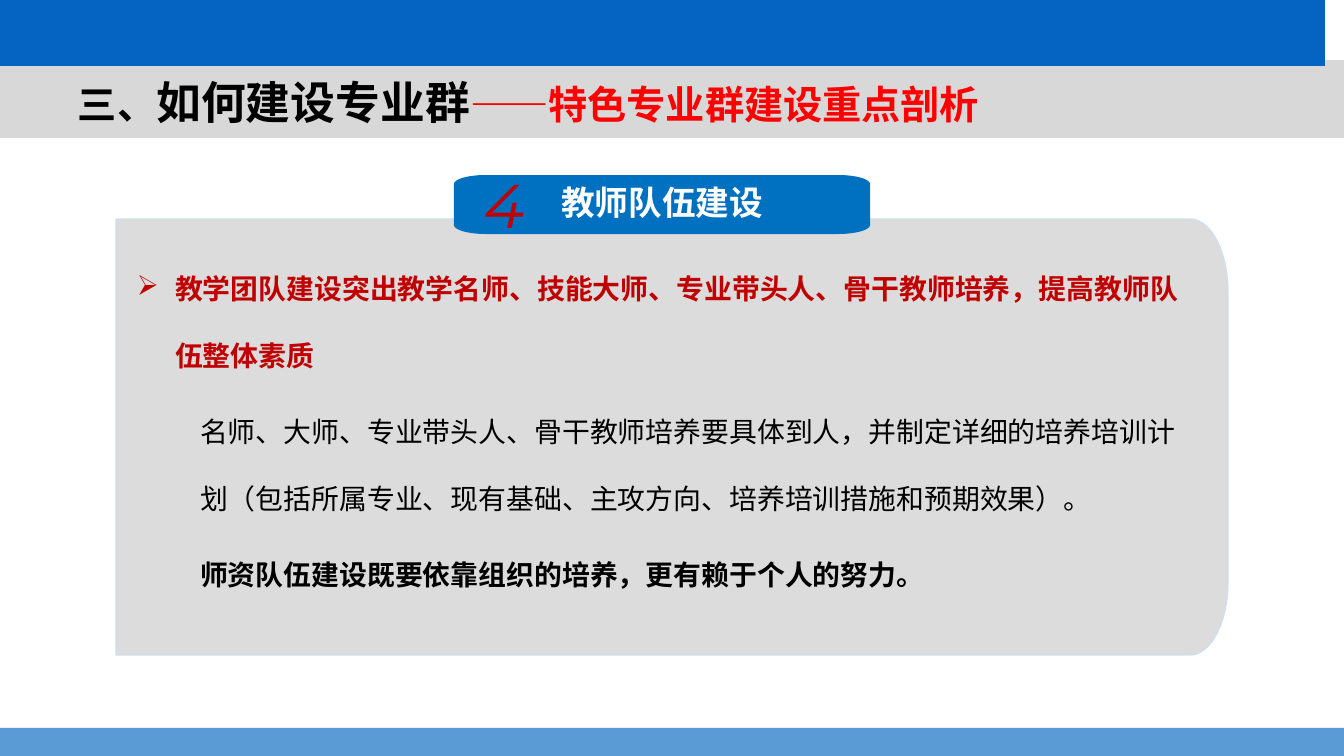
import math
from dataclasses import dataclass

import lxml.etree
import pptx
import pptx.dml.color
import pptx.enum.shapes
import pptx.enum.text
import pptx.oxml.ns
import pptx.util

PX_PER_INCH = 100.8


@dataclass(frozen=True)
class Theme:
    """Colours, fonts and type sizes of the slide."""
    white: str = "FFFFFF"
    black: str = "000000"
    grey: str = "D8D8D8"
    banner_blue: str = "0563C1"
    footer_blue: str = "5B9BD5"
    badge_blue: str = "0070C0"
    panel_edge: str = "D1DEEF"
    red: str = "FF0000"
    dark_red: str = "C00000"
    text_font: str = "Noto Sans CJK SC"
    number_font: str = "Montserrat"
    heading_size: float = 32
    subheading_size: float = 28
    badge_size: float = 24
    body_size: float = 19.9
    number_size: float = 44


THEME = Theme()


def px(length):
    """Turn a length in px into EMU."""
    return pptx.util.Inches(length / PX_PER_INCH)


def rgb(colour):
    """Turn a hex string into a colour."""
    return pptx.dml.color.RGBColor.from_string(colour)


def apply(target, **values):
    """Set each given attribute on the target."""
    for name, value in values.items():
        setattr(target, name, value)


def add_element(parent, tag, **attributes):
    """Append a drawing element with its attributes."""
    return lxml.etree.SubElement(parent, pptx.oxml.ns.qn(tag), attributes)


def paint(shape, fill, edge=None, opacity=None):
    """Give a shape its fill, outline and opacity, without shadow."""
    shape.shadow.inherit = False
    shape.fill.solid()
    shape.fill.fore_color.rgb = rgb(fill)
    if opacity:
        colour = shape.fill._xPr.find(".//" + pptx.oxml.ns.qn("a:srgbClr"))
        add_element(colour, "a:alpha", val=str(opacity * 1000))
    if edge:
        shape.line.color.rgb = rgb(edge)
        shape.line.width = pptx.util.Pt(1)
    else:
        shape.line.fill.background()


def add_bar(slide, box, fill):
    """Add a plain horizontal bar."""
    kind = pptx.enum.shapes.MSO_SHAPE.RECTANGLE
    paint(slide.shapes.add_shape(kind, *map(px, box)), fill)


def add_rounded(slide, box, radius, rounded):
    """Add a box whose chosen corners, clockwise from top left, are elliptical."""
    left, top, width, height = box
    points = []
    for corner, is_rounded in enumerate(rounded):
        at_right, at_bottom = corner in (1, 2), corner in (2, 3)
        radius_x, radius_y = radius if is_rounded else (0, 0)
        centre_x = left + width - radius_x if at_right else left + radius_x
        centre_y = top + height - radius_y if at_bottom else top + radius_y
        for step in range(13 if is_rounded else 1):
            angle = math.radians(180 + 90 * corner + 7.5 * step)
            points.append((px(centre_x + radius_x * math.cos(angle)),
                           px(centre_y + radius_y * math.sin(angle))))
    builder = slide.shapes.build_freeform(*points[0])
    builder.add_line_segments(points[1:], close=True)
    return builder.convert_to_shape()


def add_text_frame(slide, box, inset_top=5):
    """Add a wrapping text box and return its frame."""
    frame = slide.shapes.add_textbox(*map(px, box)).text_frame
    apply(frame, word_wrap=True, margin_left=px(10), margin_right=px(10),
          margin_top=px(inset_top), margin_bottom=px(inset_top))
    return frame


def add_run(paragraph, text, size, colour, typeface=THEME.text_font, **values):
    """Add a run of text in the given format."""
    run = paragraph.add_run()
    run.text = text
    apply(run.font, size=pptx.util.Pt(size), name=typeface, **values)
    run.font.color.rgb = rgb(colour)
    add_element(run._r.get_or_add_rPr(), "a:ea", typeface=typeface)


def add_header(slide, box):
    """Add the two header bars and the slide title."""
    left, top, width, height = box
    add_bar(slide, (left, top + 60, width, height - 60), THEME.grey)
    add_bar(slide, (left, top, width - 19, 66), THEME.banner_blue)
    paragraph = add_text_frame(slide, (left + 68, top + 76, 1017, 47)).paragraphs[0]
    paragraph.line_spacing = 0.9
    for text, size, colour in (
            ("三、", THEME.subheading_size, THEME.black),
            ("如何建设专业群", THEME.heading_size, THEME.black),
            ("——特色专业群建设重点剖析", THEME.subheading_size, THEME.red)):
        add_run(paragraph, text, size, colour, bold=True)


def add_panel(slide, box):
    """Add the grey panel with its bullet and two explanations."""
    left, top, width, height = box
    panel = add_rounded(slide, box, (38, 73), (False, True, True, False))
    paint(panel, THEME.grey, THEME.panel_edge, 89)
    frame = add_text_frame(slide, (left + 11, top + 19, width - 38, 353), 0)
    rows = (
        ("教学团队建设突出教学名师、技能大师、专业带头人、骨干教师培养，提高教师队伍整体素质",
         THEME.dark_red, True, 38, "➢"),
        ("名师、大师、专业带头人、骨干教师培养要具体到人，并制定详细的培养培训计划"
         "（包括所属专业、现有基础、主攻方向、培养培训措施和预期效果）。",
         THEME.black, False, 63, None),
        ("师资队伍建设既要依靠组织的培养，更有赖于个人的努力。",
         THEME.black, True, 63, None))
    for index, (text, colour, bold, indent, bullet) in enumerate(rows):
        paragraph = frame.add_paragraph() if index else frame.paragraphs[0]
        properties = paragraph._p.get_or_add_pPr()
        properties.set("marL", str(px(indent)))
        properties.set("indent", str(-px(indent) if bullet else 0))
        if bullet:
            add_element(properties, "a:buChar", char=bullet)
        apply(paragraph, line_spacing=pptx.util.Pt(48), space_after=pptx.util.Pt(6))
        add_run(paragraph, text, THEME.body_size, colour, bold=bold)


def add_badge(slide, box):
    """Add the numbered topic badge."""
    left, top, width, height = box
    badge = add_rounded(slide, box, (32, 9), (True,) * 4)
    paint(badge, THEME.badge_blue)
    frame = badge.text_frame
    apply(frame, word_wrap=True, margin_left=px(23), margin_right=px(23),
          margin_top=px(14), margin_bottom=px(14),
          vertical_anchor=pptx.enum.text.MSO_ANCHOR.MIDDLE)
    apply(frame.paragraphs[0], line_spacing=0.9,
          alignment=pptx.enum.text.PP_ALIGN.CENTER)
    add_run(frame.paragraphs[0], "教师队伍建设", THEME.badge_size, THEME.white, bold=True)
    number = add_text_frame(slide, (left + 20, top - 13, 58, 85))
    add_run(number.paragraphs[0], "4", THEME.number_size, THEME.dark_red,
            THEME.number_font, italic=True)


def main():
    """Build the slide and save it."""
    presentation = pptx.Presentation()
    apply(presentation, slide_width=px(1344), slide_height=px(756))
    slide = presentation.slides.add_slide(presentation.slide_layouts[6])
    add_header(slide, (0, 0, 1344, 138))
    add_bar(slide, (0, 728, 1344, 28), THEME.footer_blue)
    add_panel(slide, (116, 219, 1112, 436))
    add_badge(slide, (454, 175, 416, 59))
    presentation.save("out.pptx")


if __name__ == "__main__":
    main()
